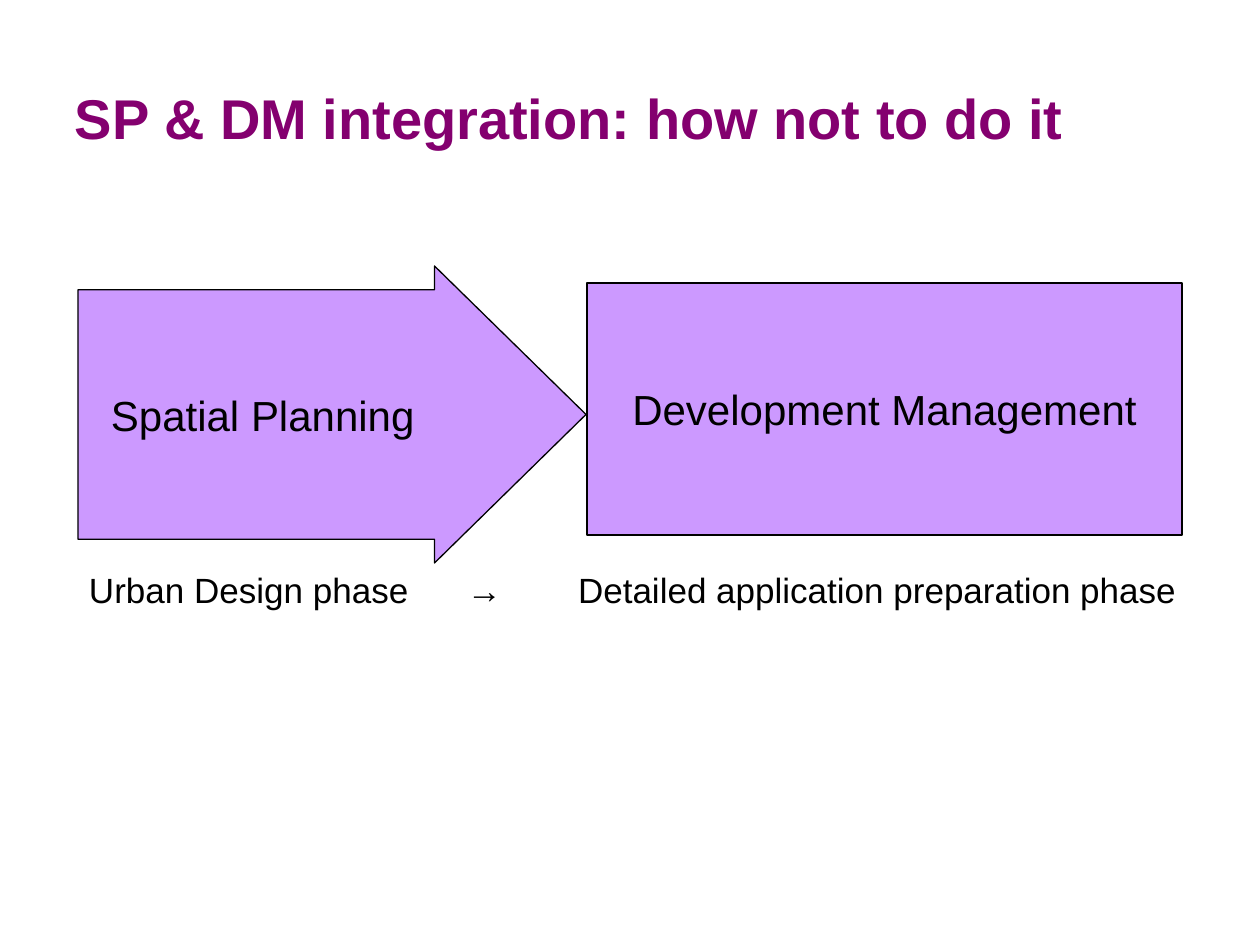
import pptx
import pptx.util
import pptx.dml.color
import pptx.enum.shapes
import pptx.enum.text
import pptx.oxml.ns
import lxml.etree

PX = 914400 / 126
PLUM = pptx.dml.color.RGBColor(0x84, 0x00, 0x6F)
LILAC = pptx.dml.color.RGBColor(0xCC, 0x99, 0xFF)
BLACK = pptx.dml.color.RGBColor(0, 0, 0)
LEFT = pptx.enum.text.PP_ALIGN.LEFT
CENTER = pptx.enum.text.PP_ALIGN.CENTER
TOP = pptx.enum.text.MSO_ANCHOR.TOP
MIDDLE = pptx.enum.text.MSO_ANCHOR.MIDDLE
SHAPE = pptx.enum.shapes.MSO_SHAPE


def px(n):
    return pptx.util.Emu(round(n * PX))


class Deck:
    font = "Arial"

    def __init__(self, width, height):
        self.prs = pptx.Presentation()
        self.prs.slide_width = px(width)
        self.prs.slide_height = px(height)
        self.slide = self.prs.slides.add_slide(self.prs.slide_layouts[6])

    def set_text(self, sp, text, size, color=BLACK, bold=False, align=LEFT,
                 anchor=MIDDLE, insets=(12, 6, 12, 6), tabs=()):
        tf = sp.text_frame
        tf.word_wrap = True
        tf.vertical_anchor = anchor
        tf.margin_left, tf.margin_top, tf.margin_right, tf.margin_bottom = map(px, insets)
        p = tf.paragraphs[0]
        p.text = text
        p.alignment = align
        if tabs:
            qn = pptx.oxml.ns.qn
            tab_list = lxml.etree.SubElement(p._p.get_or_add_pPr(), qn("a:tabLst"))
            for pos in tabs:
                lxml.etree.SubElement(tab_list, qn("a:tab"), pos=str(px(pos)), algn="l")
        p.font.name = self.font
        p.font.size = pptx.util.Pt(size)
        p.font.bold = bold
        p.font.color.rgb = color

    def text(self, box, text, size, **style):
        sp = self.slide.shapes.add_textbox(*map(px, box))
        self.set_text(sp, text, size, **style)

    def block(self, kind, box, text, adjustments=(), **style):
        sp = self.slide.shapes.add_shape(kind, *map(px, box))
        for i, value in enumerate(adjustments):
            sp.adjustments[i] = value
        sp.shadow.inherit = False
        sp.fill.solid()
        sp.fill.fore_color.rgb = LILAC
        sp.line.color.rgb = BLACK
        sp.line.width = pptx.util.Pt(0.75)
        self.set_text(sp, text, 24, **style)


def main():
    deck = Deck(1260, 945)
    deck.text((63, 38, 1134, 158), "SP & DM integration: how not to do it", 32,
              color=PLUM, bold=True)
    deck.text((78, 562, 1113, 55),
              "Urban Design phase\t→\tDetailed application preparation phase", 20,
              anchor=TOP, insets=(11, 6, 0, 6), tabs=(378, 489))
    deck.block(SHAPE.RECTANGLE, (587, 283, 595, 252), "Development Management",
               align=CENTER)
    deck.block(SHAPE.RIGHT_ARROW, (78, 266, 508, 297), "Spatial Planning",
               adjustments=(0.84, 0.51), insets=(33, 6, 12, 6))
    deck.prs.save("out.pptx")


if __name__ == "__main__":
    main()
